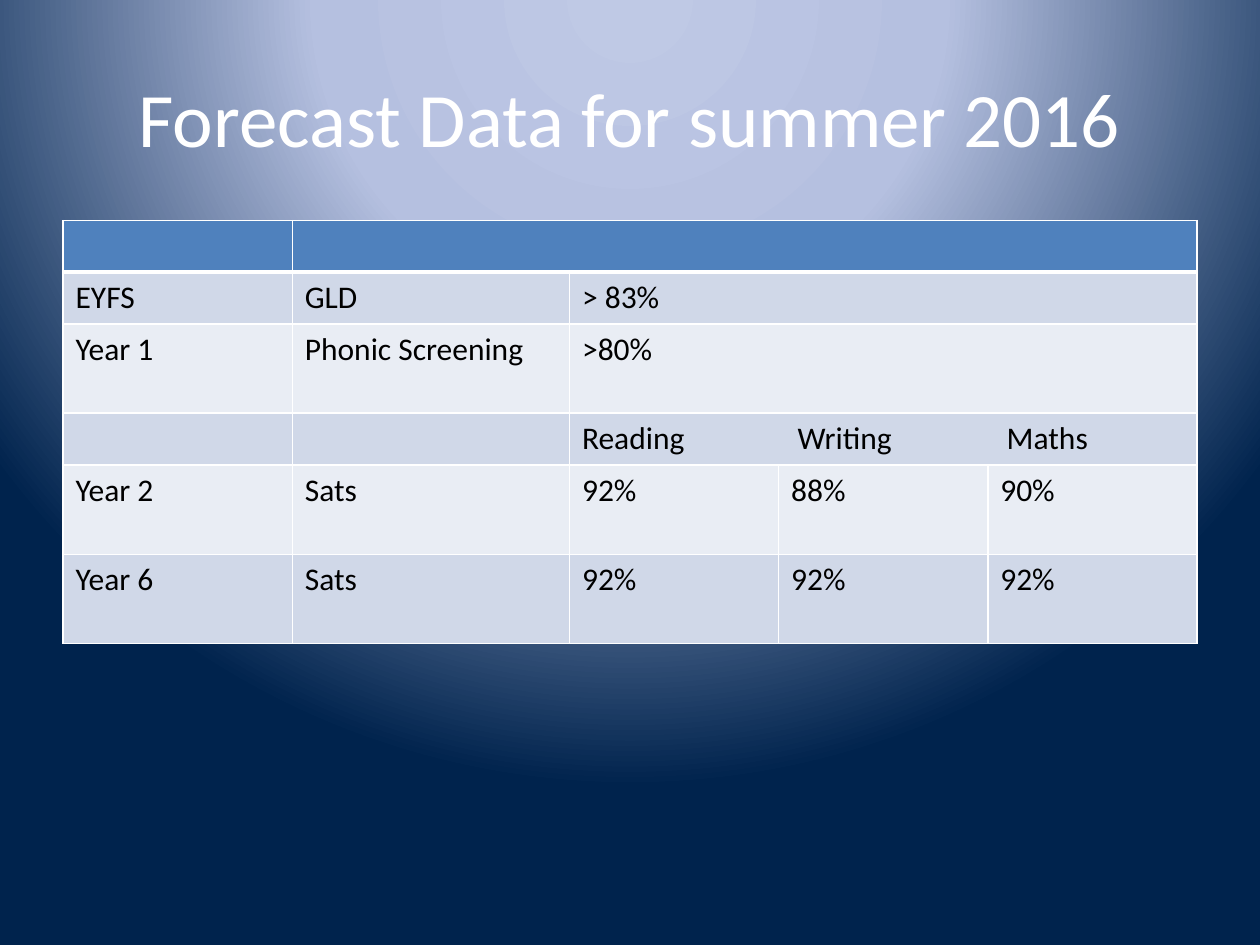
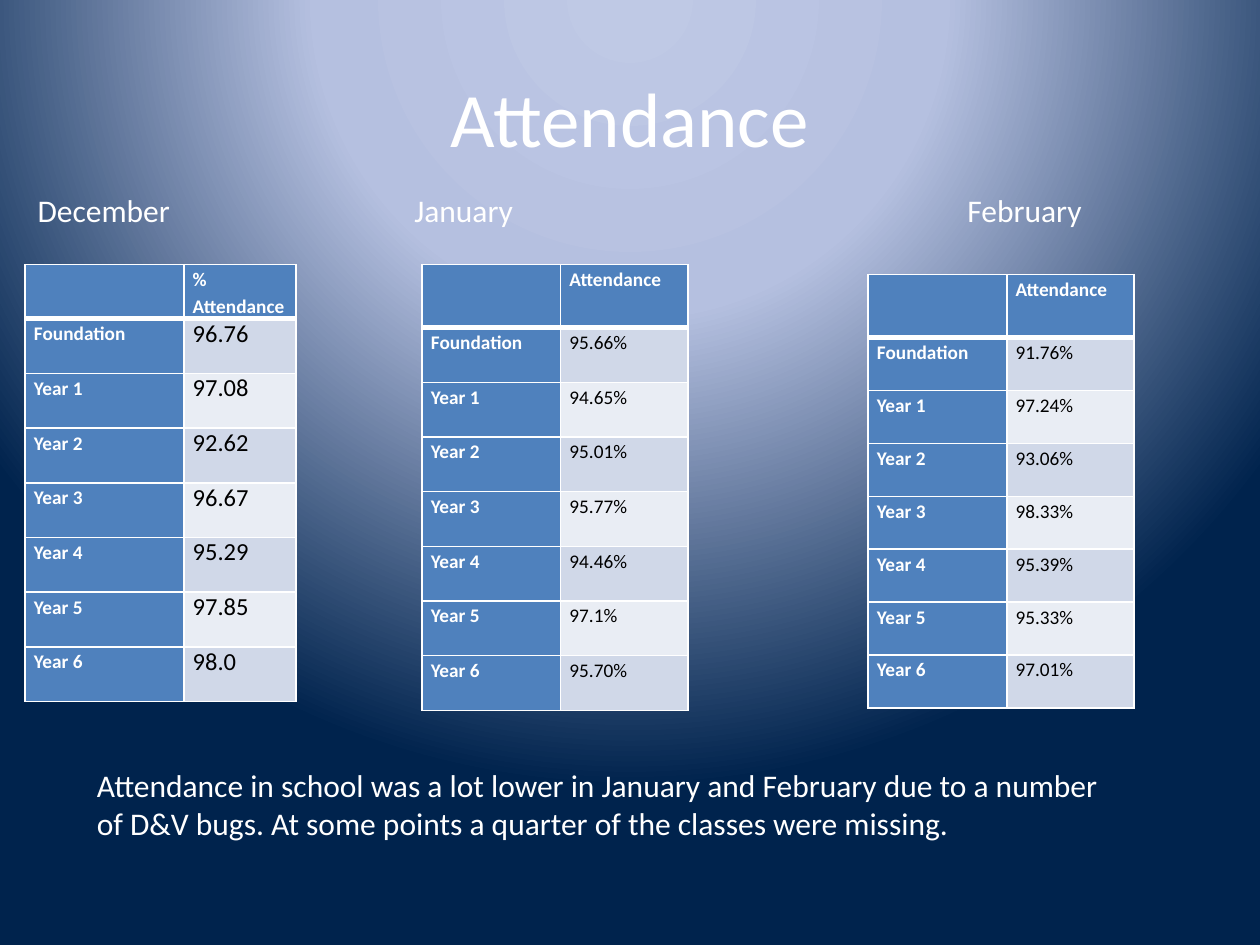
from lxml import etree
from pptx import Presentation
from pptx.dml.color import RGBColor
from pptx.enum.text import MSO_ANCHOR, PP_ALIGN
from pptx.oxml import parse_xml
from pptx.oxml.ns import nsdecls, qn
from pptx.util import Inches, Pt

CENTER = PP_ALIGN.CENTER
LEFT = PP_ALIGN.LEFT
MIDDLE = MSO_ANCHOR.MIDDLE
TOP = MSO_ANCHOR.TOP

FONT = "Calibri"
WHITE = "FFFFFF"
BLACK = "000000"
HEADER_BLUE = "4F81BD"
BANDS = ("D0D8E8", "E9EDF4")
GRADIENT = ((0, "BFC9E5"), (40, "B5C0E0"), (100, "00234D"))

TITLE_FORMAT = {"name": FONT, "size": Pt(44)}
BODY_FORMAT = {"name": FONT, "size": Pt(18), "bold": False}
LABEL_FORMAT = {"name": FONT, "size": Pt(11), "bold": True}
PERCENT_FORMAT = {"name": FONT, "size": Pt(11), "bold": False}
NUMBER_FORMAT = {"name": FONT, "size": Pt(14), "bold": False}

FORECAST_COLUMNS = (1.82, 2.2, 1.66, 1.66, 1.66)
FORECAST_HEIGHTS = (0.41, 0.41, 0.71, 0.41, 0.71, 0.71)
FORECAST_ROWS = (
    ("", "", "", "", ""),
    ("EYFS", "GLD", "> 83%", "", ""),
    ("Year 1", "Phonic Screening", ">80%", "", ""),
    ("", "", "Reading\tWriting\tMaths", "", ""),
    ("Year 2", "Sats", "92%", "88%", "90%"),
    ("Year 6", "Sats", "92%", "92%", "92%"),
)
FORECAST_MERGES = ((0, 1), (1, 2), (2, 2), (3, 2))

CLASSES = ("Foundation",) + tuple(f"Year {year}" for year in range(1, 7))
ATTENDANCE_TABLES = (
    {
        "position": (0.2, 2.1), "columns": (1.26, 0.89),
        "header_height": 0.43, "row_height": 0.434,
        "header": "% Attendance", "value_format": NUMBER_FORMAT, "value_spacing": 1.0,
        "values": ("96.76", "97.08", "92.62", "96.67", "95.29", "97.85", "98.0"),
    },
    {
        "position": (3.35, 2.1), "columns": (1.1, 1.01),
        "header_height": 0.5, "row_height": 0.434,
        "header": "Attendance", "value_format": PERCENT_FORMAT, "value_spacing": 1.15,
        "values": ("95.66%", "94.65%", "95.01%", "95.77%", "94.46%", "97.1%", "95.70%"),
    },
    {
        "position": (6.89, 2.18), "columns": (1.1, 1.01),
        "header_height": 0.5, "row_height": 0.42,
        "header": "Attendance", "value_format": PERCENT_FORMAT, "value_spacing": 1.15,
        "values": ("91.76%", "97.24%", "93.06%", "98.33%", "95.39%", "95.33%", "97.01%"),
    },
)


def color(value):
    """Turn a hex string into a colour."""
    return RGBColor.from_string(value)


def set_background(master):
    """Give the master the radial gradient that every slide inherits."""
    stops = "".join(
        f'<a:gs pos="{position * 1000}"><a:srgbClr val="{value}"/></a:gs>'
        for position, value in GRADIENT
    )
    background = parse_xml(
        f'<p:bg {nsdecls("p", "a")}><p:bgPr><a:gradFill rotWithShape="1">'
        f'<a:gsLst>{stops}</a:gsLst><a:path path="circle">'
        '<a:fillToRect l="50000" t="-80000" r="50000" b="180000"/></a:path>'
        "</a:gradFill><a:effectLst/></p:bgPr></p:bg>"
    )
    common_data = master.element.find(qn("p:cSld"))
    for existing in common_data.findall(qn("p:bg")):
        common_data.remove(existing)
    common_data.insert(0, background)


def add_tabs(paragraph, positions):
    """Add left tab stops at the given distances in inches."""
    properties = paragraph._p.get_or_add_pPr()
    tab_list = etree.SubElement(properties, qn("a:tabLst"))
    for position in positions:
        etree.SubElement(tab_list, qn("a:tab"), pos=str(Inches(position)), algn="l")


def write_text(text_frame, text, text_color, font_format, tabs=(), spacing=None):
    """Write one formatted paragraph into a text frame."""
    paragraph = text_frame.paragraphs[0]
    if spacing:
        paragraph.line_spacing = spacing
    if tabs:
        add_tabs(paragraph, tabs)
    if text:
        run = paragraph.add_run()
        run.text = text
        font = run.font
    else:
        font = paragraph.font
    for name, value in font_format.items():
        setattr(font, name, value)
    font.color.rgb = color(text_color)
    return paragraph


def add_text(slide, box, text, font_format=BODY_FORMAT, alignment=LEFT, anchor=TOP, tabs=()):
    """Add a white text box."""
    shape = slide.shapes.add_textbox(*(Inches(length) for length in box))
    text_frame = shape.text_frame
    text_frame.word_wrap = True
    text_frame.vertical_anchor = anchor
    write_text(text_frame, text, WHITE, font_format, tabs).alignment = alignment


def add_title(slide, text):
    """Add the centred slide title."""
    add_text(slide, (0.5, 0.3, 9, 1.25), text, TITLE_FORMAT, CENTER, MIDDLE)


def set_borders(cell, row_index):
    """Draw white cell borders, with a heavy line under the header row."""
    widths = {
        "L": 1,
        "R": 1,
        "T": 3 if row_index == 1 else 1,
        "B": 3 if row_index == 0 else 1,
    }
    properties = cell._tc.get_or_add_tcPr()
    for side, width in widths.items():
        line = etree.SubElement(properties, qn(f"a:ln{side}"), w=str(Pt(width)))
        fill = etree.SubElement(line, qn("a:solidFill"))
        etree.SubElement(fill, qn("a:srgbClr"), val=WHITE)


def add_grid(slide, position, columns, heights, blue_columns=0):
    """Add an empty table with a header row, bands and borders."""
    left, top = position
    lengths = (left, top, sum(columns), sum(heights))
    frame = slide.shapes.add_table(
        len(heights), len(columns), *(Inches(length) for length in lengths)
    )
    table = frame.table
    table.first_row = table.horz_banding = False
    for column, width in zip(table.columns, columns):
        column.width = Inches(width)
    for row_index, row in enumerate(table.rows):
        row.height = Inches(heights[row_index])
        for column_index, cell in enumerate(row.cells):
            is_blue = row_index == 0 or column_index < blue_columns
            set_borders(cell, row_index)
            cell.fill.solid()
            cell.fill.fore_color.rgb = color(
                HEADER_BLUE if is_blue else BANDS[(row_index - 1) % 2]
            )
    return table


def add_forecast_table(slide):
    """Add the table of forecast results by year group."""
    table = add_grid(slide, (0.5, 1.75), FORECAST_COLUMNS, FORECAST_HEIGHTS)
    for row_index, column_index in FORECAST_MERGES:
        table.cell(row_index, column_index).merge(table.cell(row_index, 4))
    for row_index, texts in enumerate(FORECAST_ROWS):
        for column_index, text in enumerate(texts):
            tabs = (1.71, 3.37) if "\t" in text else ()
            cell = table.cell(row_index, column_index)
            write_text(cell.text_frame, text, BLACK, BODY_FORMAT, tabs)


def add_attendance_table(slide, month):
    """Add one month of attendance by class."""
    heights = [month["header_height"]] + [month["row_height"]] * len(CLASSES)
    table = add_grid(slide, month["position"], month["columns"], heights, blue_columns=1)
    margins = {
        "margin_left": Inches(0.07), "margin_right": Inches(0.07),
        "margin_top": 0, "margin_bottom": 0,
    }
    rows = [("", month["header"]), *zip(CLASSES, month["values"])]
    for row_index, texts in enumerate(rows):
        for column_index, text in enumerate(texts):
            cell = table.cell(row_index, column_index)
            for name, value in margins.items():
                setattr(cell, name, value)
            if row_index and column_index:
                style = (BLACK, month["value_format"], (), month["value_spacing"])
            else:
                style = (WHITE, LABEL_FORMAT, (), 1.15)
            write_text(cell.text_frame, text, *style)


def build_forecast(slide):
    """Build the forecast slide."""
    add_title(slide, "Forecast Data for summer 2016")
    add_forecast_table(slide)


def build_attendance(slide):
    """Build the attendance slide."""
    add_title(slide, "Attendance")
    for month in ATTENDANCE_TABLES:
        add_attendance_table(slide, month)
    add_text(slide, (0.2, 1.47, 9.37, 0.4), "December\tJanuary\tFebruary", tabs=(2.99, 7.38))
    add_text(
        slide,
        (0.67, 6.03, 8.19, 0.71),
        "Attendance in school was a lot lower in January and February due to a number "
        "of D&V bugs. At some points a quarter of the classes were missing.",
    )


def main():
    """Build and save the presentation."""
    presentation = Presentation()
    presentation.slide_width = Inches(10)
    presentation.slide_height = Inches(7.5)
    set_background(presentation.slide_master)
    for build in (build_forecast, build_attendance):
        build(presentation.slides.add_slide(presentation.slide_layouts[6]))
    presentation.save("out.pptx")


if __name__ == "__main__":
    main()
